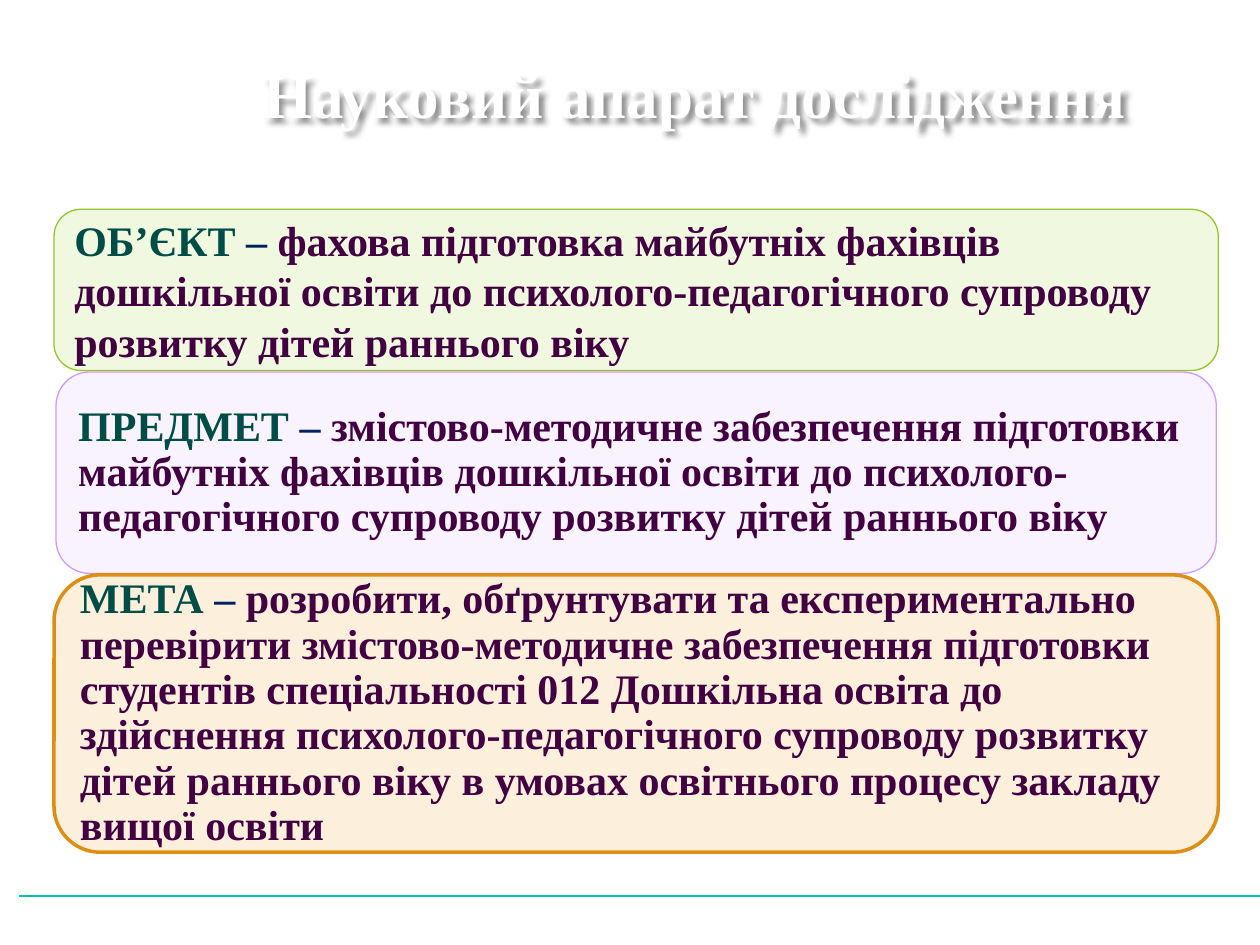
from lxml import etree
from pptx import Presentation
from pptx.dml.color import RGBColor
from pptx.enum.shapes import MSO_CONNECTOR, MSO_SHAPE
from pptx.enum.text import MSO_ANCHOR, PP_ALIGN
from pptx.oxml.ns import qn
from pptx.util import Cm, Pt

TITLE_ONLY = 5
ROUNDED = MSO_SHAPE.ROUNDED_RECTANGLE
STRAIGHT = MSO_CONNECTOR.STRAIGHT
MIDDLE, BOTTOM = MSO_ANCHOR.MIDDLE, MSO_ANCHOR.BOTTOM
LEFT, CENTER = PP_ALIGN.LEFT, PP_ALIGN.CENTER

FONT = "Times New Roman"
TERM, DASH, BODY = "004C47", "002060", "420042"
TITLE = "Науковий апарат дослідження"
PANELS = [
    {"term": "ОБ’ЄКТ",
     "text": "фахова підготовка майбутніх фахівців дошкільної освіти до "
             "психолого-педагогічного супроводу розвитку дітей раннього віку",
     "box": (1.09, 4.22, 23.47, 3.25), "spacing": 1.0,
     "fill": "F0F9DF", "line": "94C627", "weight": 0.75},
    {"term": "ПРЕДМЕТ",
     "text": "змістово-методичне забезпечення підготовки майбутніх фахівців "
             "дошкільної освіти до психолого-педагогічного супроводу розвитку "
             "дітей раннього віку",
     "box": (1.13, 7.5, 23.39, 4.06), "spacing": 0.9,
     "fill": "F9F3FF", "line": "CC99FF", "weight": 0.75},
    {"term": "МЕТА",
     "text": "розробити, обґрунтувати та експериментально перевірити "
             "змістово-методичне забезпечення підготовки студентів "
             "спеціальності 012 Дошкільна освіта до здійснення "
             "психолого-педагогічного супроводу розвитку дітей раннього віку "
             "в умовах освітнього процесу закладу вищої освіти",
     "box": (1.09, 11.59, 23.47, 5.59), "spacing": 0.9,
     "fill": "FCF0DC", "line": "DC8F14", "weight": 2},
]


def color(value):
    return RGBColor.from_string(value)


def style_font(font, size):
    font.name, font.size, font.bold = FONT, Pt(size), True


def add_shadow(shape):
    """Give an unfilled shape a soft shadow, which falls from its text."""
    effects = etree.SubElement(shape._element.spPr, qn("a:effectLst"))
    shadow = etree.SubElement(effects, qn("a:outerShdw"), blurRad="38100",
                              dist="38100", dir="2700000", algn="tl",
                              rotWithShape="0")
    black = etree.SubElement(shadow, qn("a:srgbClr"), val="000000")
    etree.SubElement(black, qn("a:alpha"), val="43000")


def add_title(slide):
    title = slide.shapes.title
    title.left, title.top, title.width, title.height = map(
        Cm, (3, 1.17, 22, 1.6))
    title.fill.background()
    add_shadow(title)
    frame = title.text_frame
    frame.text = TITLE
    frame.vertical_anchor = BOTTOM
    paragraph = frame.paragraphs[0]
    paragraph.alignment = CENTER
    style_font(paragraph.font, 36)
    paragraph.font.color.rgb = color("FFFFFF")


def add_rule(slide):
    rule = slide.shapes.add_connector(
        STRAIGHT, Cm(0.38), Cm(18.06), Cm(25.4), Cm(18.06))
    rule.line.color.rgb = color("00C2B7")
    rule.line.width = Pt(0.75)
    etree.SubElement(rule._element.spPr, qn("a:effectLst"))


def add_panel(slide, panel):
    shape = slide.shapes.add_shape(ROUNDED, *map(Cm, panel["box"]))
    shape.shadow.inherit = False
    shape.fill.solid()
    shape.fill.fore_color.rgb = color(panel["fill"])
    shape.line.color.rgb = color(panel["line"])
    shape.line.width = Pt(panel["weight"])
    frame = shape.text_frame
    frame.word_wrap = True
    frame.vertical_anchor = MIDDLE
    frame.margin_left = frame.margin_right = Cm(0.25)
    frame.margin_top = frame.margin_bottom = Cm(0.25)
    paragraph = frame.paragraphs[0]
    paragraph.alignment = LEFT
    paragraph.line_spacing = panel["spacing"]
    style_font(paragraph.font, 24)
    for text, run_color in ((panel["term"], TERM), (" – ", DASH),
                            (panel["text"], BODY)):
        run = paragraph.add_run()
        run.text = text
        run.font.color.rgb = color(run_color)


def main():
    presentation = Presentation()
    presentation.slide_width, presentation.slide_height = Cm(25.4), Cm(19.05)
    slide = presentation.slides.add_slide(
        presentation.slide_layouts[TITLE_ONLY])
    add_rule(slide)
    add_title(slide)
    for panel in PANELS:
        add_panel(slide, panel)
    presentation.save("out.pptx")


if __name__ == "__main__":
    main()
